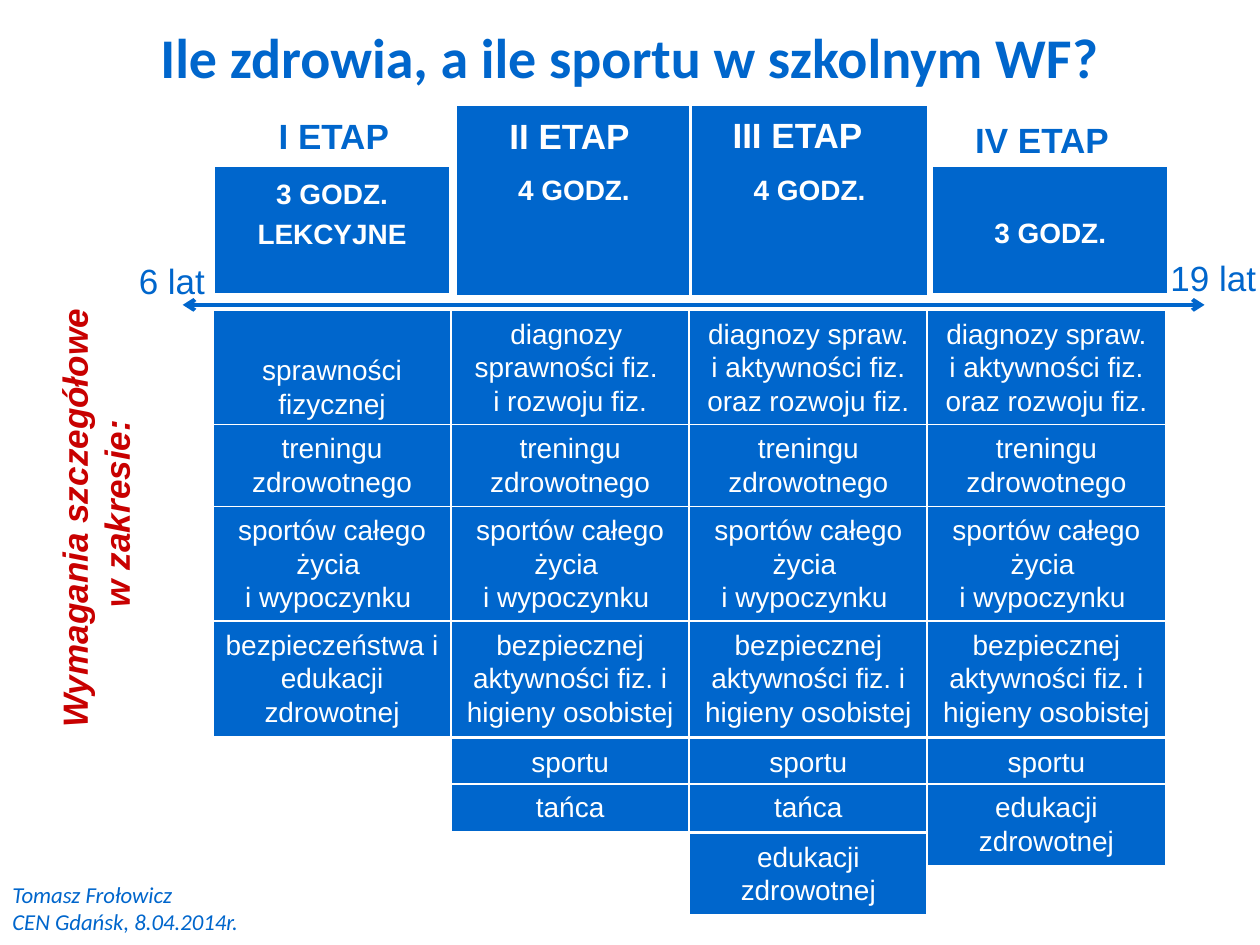
from copy import deepcopy
from pptx import Presentation
from pptx.dml.color import RGBColor
from pptx.enum.shapes import MSO_CONNECTOR as CONN, MSO_SHAPE as SHAPE
from pptx.enum.text import MSO_ANCHOR as ANCHOR, PP_ALIGN as ALIGN
from pptx.oxml.ns import qn
from pptx.util import Inches, Pt
from lxml import etree

BLUE = RGBColor(0x00, 0x66, 0xCC)
WHITE = RGBColor(0xFF, 0xFF, 0xFF)
RED = RGBColor(0xC8, 0x00, 0x00)

LEFT, COL_W = 1.69, 1.89
ROW_TOPS = [2.46, 3.37, 4.02, 4.93, 5.86, 6.22, 6.61]
LOW, MID, TALL = 0.38, 0.65, 0.92

TRAINING = ("treningu zdrowotnego", MID)
SPORTS = ("sportów całego życia \ni wypoczynku ", TALL)
SAFETY = ("bezpiecznej aktywności fiz. i higieny osobistej", TALL)
DIAGNOSIS = ("diagnozy spraw. i aktywności fiz. oraz rozwoju fiz.", TALL)
SPORT = ("sportu", LOW)
DANCE = ("tańca", LOW)
EDUCATION = ("edukacji zdrowotnej", MID)

COLUMNS = [
    [("sprawności fizycznej", TALL), TRAINING, SPORTS,
     ("bezpieczeństwa i edukacji zdrowotnej", TALL)],
    [("diagnozy \nsprawności fiz. \ni rozwoju fiz.", TALL), TRAINING, SPORTS,
     SAFETY, SPORT, DANCE],
    [DIAGNOSIS, TRAINING, SPORTS, SAFETY, SPORT, DANCE, EDUCATION],
    [DIAGNOSIS, TRAINING, SPORTS, SAFETY, SPORT, EDUCATION],
]

HOURS = [
    (1.69, 1.31, 1.03, ["3 GODZ.", "LEKCYJNE"], {}),
    (3.61, 0.83, 1.53, ["4 GODZ."], {"top": 0.5}),
    (5.48, 0.83, 1.53, ["4 GODZ."], {"top": 0.5}),
    (7.39, 1.31, 1.03, ["3 GODZ."], {"anchor": ANCHOR.MIDDLE}),
]

STAGES = [
    ("I ETAP", 1.98, 0.81, BLUE),
    ("II ETAP", 3.85, 0.81, WHITE),
    ("III ETAP", 5.66, 0.8, WHITE),
    ("IV ETAP", 7.6, 0.84, BLUE),
]


def write(tf, paragraphs, size=16, font="Arial", color=WHITE, bold=False, italic=False,
          align=ALIGN.CENTER, spacing=None, before=0, anchor=ANCHOR.TOP, top=0.05):
    tf.word_wrap = True
    tf.vertical_anchor = anchor
    tf.margin_left = tf.margin_right = Inches(0.1)
    tf.margin_top, tf.margin_bottom = Inches(top), Inches(0.05)
    for i, text in enumerate(paragraphs):
        p = tf.add_paragraph() if i else tf.paragraphs[0]
        p.alignment = align
        p.line_spacing = spacing
        p.space_before = Pt(before if i else 0)
        for j, line in enumerate(text.split("\n")):
            if j:
                p.add_line_break()
            r = p.add_run()
            r.text = line
            f = r.font
            f.size, f.name, f.bold, f.italic = Pt(size), font, bold, italic
            f.color.rgb = color
        for br in p._p.findall(qn("a:br")):
            br.append(deepcopy(r._r.find(qn("a:rPr"))))


class Board:
    def __init__(self, prs):
        self.s = prs.slides.add_slide(prs.slide_layouts[5])
        self.color = BLUE

    def title(self, text, x, y, w, h):
        sp = self.s.shapes.title
        sp.left, sp.top, sp.width, sp.height = map(Inches, (x, y, w, h))
        write(sp.text_frame, [text], size=32, font="Calibri", color=self.color, bold=True)

    def box(self, paragraphs, x, y, w, h, line=1, **fmt):
        sp = self.s.shapes.add_shape(SHAPE.RECTANGLE, *map(Inches, (x, y, w, h)))
        sp.shadow.inherit = False
        sp.fill.solid()
        sp.fill.fore_color.rgb = self.color
        sp.line.color.rgb = WHITE
        sp.line.width = Pt(line)
        write(sp.text_frame, paragraphs, **fmt)

    def label(self, paragraphs, x, y, w, h, rotation=0, **fmt):
        sp = self.s.shapes.add_textbox(*map(Inches, (x, y, w, h)))
        sp.rotation = rotation
        write(sp.text_frame, paragraphs, **{"size": 20, "color": self.color, **fmt})

    def arrow(self, x1, y1, x2, y2):
        c = self.s.shapes.add_connector(CONN.STRAIGHT, *map(Inches, (x1, y1, x2, y2)))
        c.line.color.rgb = self.color
        c.line.width = Pt(2.25)
        ln = c.line._get_or_add_ln()
        for end in ("a:headEnd", "a:tailEnd"):
            etree.SubElement(ln, qn(end), type="arrow")
        etree.SubElement(c._element.spPr, qn("a:effectLst"))


def main():
    prs = Presentation()
    prs.slide_width, prs.slide_height = Inches(10), Inches(7.5)
    board = Board(prs)
    board.title("Ile zdrowia, a ile sportu w szkolnym WF?", 0.5, 0.13, 9, 0.87)

    for x, y, h, paragraphs, fmt in HOURS:
        board.box(paragraphs, x, y, COL_W, h, line=2.25, bold=True, spacing=1.15, before=1, **fmt)
    for text, x, y, color in STAGES:
        board.label([text], x, y, 1.34, 0.46, color=color, bold=True, spacing=1.15)

    board.arrow(1.45, 2.42, 9.56, 2.42)
    board.label(["6 lat"], 0.95, 2.01, 0.83, 0.43)
    board.label(["19 lat"], 9.13, 1.99, 1, 0.43)

    for col, cells in enumerate(COLUMNS):
        for row, (text, h) in enumerate(cells):
            anchor = ANCHOR.BOTTOM if (col, row) == (0, 0) else ANCHOR.TOP
            board.box([text], LEFT + col * COL_W, ROW_TOPS[row], COL_W, h, anchor=anchor)

    board.label(["Wymagania szczegółowe \nw zakresie:"], -1.15, 3.69, 3.81, 0.77,
                rotation=270, color=RED, bold=True, italic=True)
    board.label(["Tomasz Frołowicz", "CEN Gdańsk, 8.04.2014r."], 0, 6.94, 2.01, 0.56,
                size=13, font="Calibri", italic=True, align=ALIGN.LEFT)
    prs.save("out.pptx")


if __name__ == "__main__":
    main()
